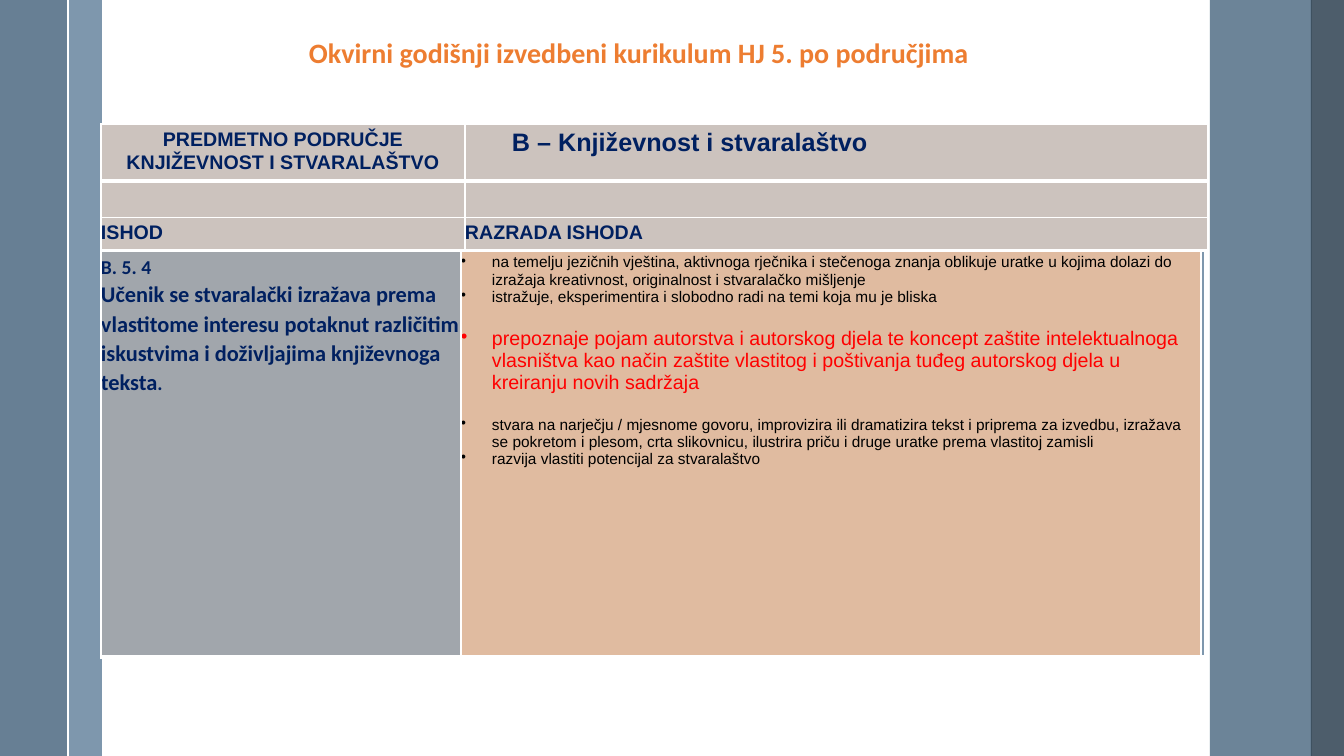
import pptx
import pptx.util
import pptx.dml.color
import pptx.enum.shapes
import pptx.enum.text
import pptx.oxml
import pptx.oxml.ns
from lxml import etree

RGB = pptx.dml.color.RGBColor
WHITE = RGB(0xFF, 0xFF, 0xFF)
BLACK = RGB(0x00, 0x00, 0x00)
RED = RGB(0xFF, 0x00, 0x00)
ORANGE = RGB(0xED, 0x7D, 0x31)
NAVY = RGB(0x00, 0x20, 0x60)
STEEL = RGB(0x7E, 0x97, 0xAD)
SLATE = RGB(0x57, 0x72, 0x89)
DARK_SLATE = RGB(0x3A, 0x4C, 0x5B)
TAUPE = RGB(0xCC, 0xC3, 0xBE)
GREY = RGB(0xA1, 0xA6, 0xAC)
PEACH = RGB(0xE0, 0xBB, 0xA0)

SLIDE_WIDTH, SLIDE_HEIGHT = 1344, 756
EMU_PER_PX = 914400 / 100.8
CELL_MARGIN = 3
BULLET_INDENT = 31
ALIGN = pptx.enum.text.PP_ALIGN

OUTCOME = ("Učenik se stvaralački izražava prema vlastitome interesu potaknut "
           "različitim iskustvima i doživljajima književnoga teksta")
DETAILS = [
    ("na temelju jezičnih vještina, aktivnoga rječnika i stečenoga znanja oblikuje "
     "uratke u kojima dolazi do izražaja kreativnost, originalnost i stvaralačko "
     "mišljenje", 11, BLACK, 0),
    ("istražuje, eksperimentira i slobodno radi na temi koja mu je bliska", 11, BLACK, 0),
    ("prepoznaje pojam autorstva i autorskog djela te koncept zaštite intelektualnoga "
     "vlasništva kao način zaštite vlastitog i poštivanja tuđeg autorskog djela u "
     "kreiranju novih sadržaja", 14, RED, 16),
    ("stvara na narječju / mjesnome govoru, improvizira ili dramatizira tekst i "
     "priprema za izvedbu, izražava se pokretom i plesom, crta slikovnicu, ilustrira "
     "priču i druge uratke prema vlastitoj zamisli", 11, BLACK, 16),
    ("razvija vlastiti potencijal za stvaralaštvo", 11, BLACK, 0),
]


def px(length):
    """Turn pixels into EMU."""
    return pptx.util.Emu(round(length * EMU_PER_PX))


def add_element(parent, tag, **attributes):
    """Append a DrawingML element with the given attributes."""
    element = etree.SubElement(parent, pptx.oxml.ns.qn(tag))
    for name, value in attributes.items():
        element.set(name, str(value))
    return element


def write(frame, text, size=14, color=NAVY, font="Arial", bold=True, align=ALIGN.LEFT,
          spacing=None, before=0, indent=0, bullet=False, new=False):
    """Write one formatted paragraph into a text frame."""
    para = frame.add_paragraph() if new else frame.paragraphs[0]
    para.alignment = align
    if spacing:
        para.line_spacing = spacing
    if before:
        para.space_before = pptx.util.Pt(before)
    properties = para._p.get_or_add_pPr()
    if indent:
        properties.set("marL", str(px(indent)))
    if bullet:
        properties.set("indent", str(-px(indent)))
        add_element(properties, "a:buChar", char="•")
    add_span(para, text, size, color, font, bold)
    return para


def add_span(para, text, size, color, font, bold):
    """Add one formatted run to a paragraph."""
    span = para.add_run()
    span.text = text
    span.font.size = pptx.util.Pt(size)
    span.font.name = font
    span.font.bold = bold
    span.font.color.rgb = color


def add_band(page, left, width, color, opacity=100):
    """Draw a full-height vertical band."""
    band = page.shapes.add_shape(pptx.enum.shapes.MSO_SHAPE.RECTANGLE,
                                 px(left), 0, px(width), px(SLIDE_HEIGHT))
    band.shadow.inherit = False
    band.line.fill.background()
    band.fill.solid()
    band.fill.fore_color.rgb = color
    if opacity < 100:
        tint = band._element.spPr.find(".//" + pptx.oxml.ns.qn("a:srgbClr"))
        add_element(tint, "a:alpha", val=opacity * 1000)


def add_frame(page):
    """Draw the side bands and the thin white rule."""
    add_band(page, 69, 33, STEEL)
    add_band(page, 0, 68, SLATE, 90)
    rule = page.shapes.add_connector(pptx.enum.shapes.MSO_CONNECTOR.STRAIGHT,
                                     px(68), 0, px(68), px(SLIDE_HEIGHT))
    rule.line.color.rgb = WHITE
    rule.line.width = pptx.util.Pt(1.5)
    add_element(rule._element.spPr, "a:effectLst")
    add_band(page, 1210, 102, SLATE, 87)
    add_band(page, 1311, 33, DARK_SLATE, 90)


def add_title(page, left, top, width, height):
    """Place the slide title."""
    box = page.shapes.add_textbox(px(left), px(top), px(width), px(height))
    box.text_frame.word_wrap = True
    write(box.text_frame, "Okvirni godišnji izvedbeni kurikulum HJ 5. po područjima",
          size=20, color=ORANGE, font="Calibri")


def style_cell(cell, color, bottom):
    """Set the margins, white borders and fill of a cell."""
    cell.margin_left = cell.margin_right = 0
    cell.margin_top = cell.margin_bottom = px(CELL_MARGIN)
    properties = cell._tc.get_or_add_tcPr()
    for tag, weight in (("a:lnL", 1), ("a:lnR", 1), ("a:lnT", 1), ("a:lnB", bottom)):
        border = add_element(properties, tag, w=pptx.util.Pt(weight))
        add_element(add_element(border, "a:solidFill"), "a:srgbClr", val=WHITE)
    cell.fill.solid()
    cell.fill.fore_color.rgb = color


def add_grid(page, left, top, widths, heights, colors, thick_row):
    """Add a table with one fill per column and a thick border under one row."""
    grid = page.shapes.add_table(len(heights), len(widths), px(left), px(top),
                                 px(sum(widths)), px(sum(heights))).table
    grid.first_row = grid.horz_banding = False
    for column, width in zip(grid.columns, widths):
        column.width = px(width)
    for index, height in enumerate(heights):
        grid.rows[index].height = px(height)
        for column, color in enumerate(colors):
            style_cell(grid.cell(index, column), color, 3 if index == thick_row else 1)
    return grid


def add_heading_table(page, left, top):
    """Place the table that names the subject area and the column heads."""
    grid = add_grid(page, left, top, [364, 743], [57, 25, 32], [TAUPE, TAUPE], 0)
    write(grid.cell(0, 0).text_frame, "PREDMETNO PODRUČJE KNJIŽEVNOST I STVARALAŠTVO",
          align=ALIGN.CENTER, spacing=1.07)
    write(grid.cell(0, 1).text_frame, "B – Književnost i stvaralaštvo",
          size=18, spacing=1.07, indent=47)
    for column, text in enumerate(["ISHOD", "RAZRADA ISHODA"]):
        write(grid.cell(1, column).text_frame, "", size=11)
        write(grid.cell(2, column).text_frame, text, spacing=1.07)


def add_outcome_table(page, left, top):
    """Place the table with the outcome and its details."""
    grid = add_grid(page, left, top, [360, 740, 4], [406], [GREY, PEACH, STEEL], 0)
    outcome = grid.cell(0, 0).text_frame
    write(outcome, "B. 5. 4", font="Calibri", spacing=1.07)
    para = write(outcome, OUTCOME, size=16, font="Calibri", spacing=1.07, new=True)
    add_span(para, ".", 14, NAVY, "Calibri", True)
    for index, (text, size, color, before) in enumerate(DETAILS):
        write(grid.cell(0, 1).text_frame, text, size=size, color=color, bold=False,
              before=before, indent=BULLET_INDENT, bullet=True, new=index > 0)


def main():
    """Build the deck and save it."""
    deck = pptx.Presentation()
    deck.slide_width, deck.slide_height = px(SLIDE_WIDTH), px(SLIDE_HEIGHT)
    page = deck.slides.add_slide(deck.slide_layouts[6])
    add_frame(page)
    add_title(page, 299, 31, 850, 44)
    add_heading_table(page, 101, 124)
    add_outcome_table(page, 101, 251)
    deck.save("out.pptx")


if __name__ == "__main__":
    main()
